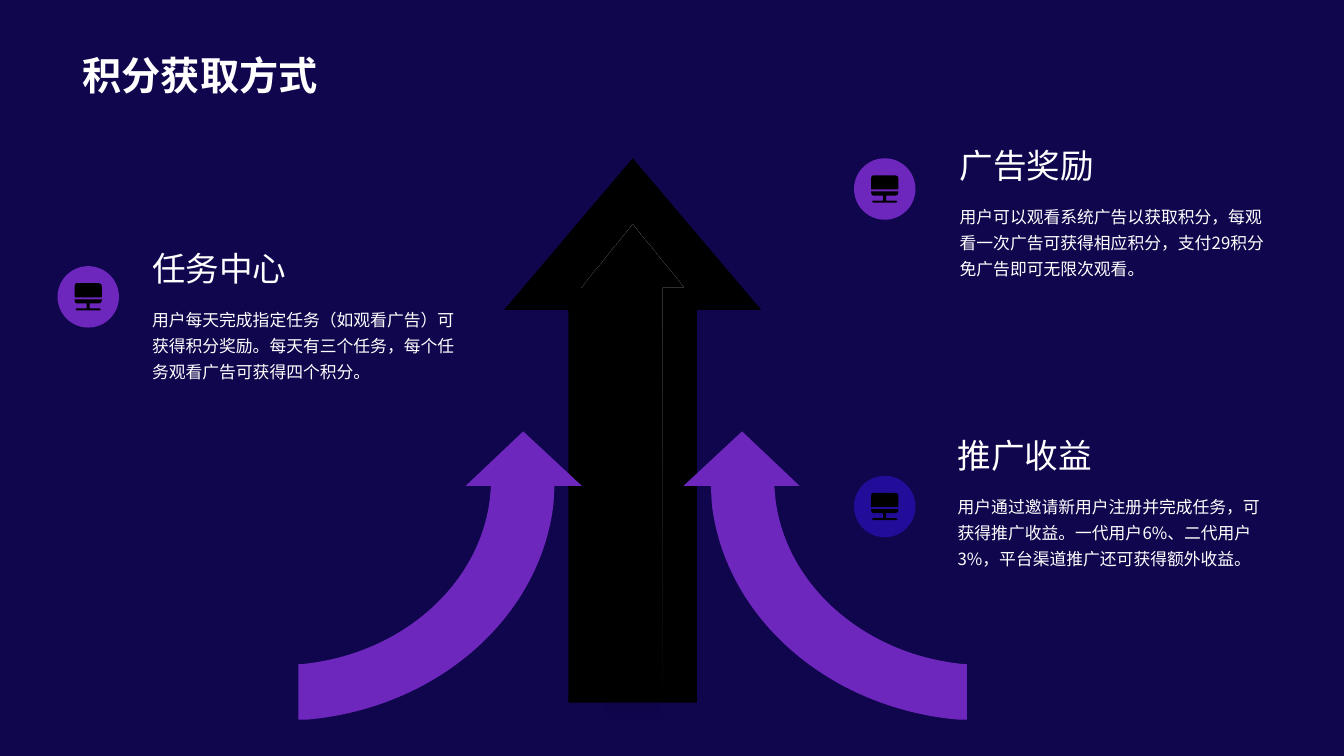
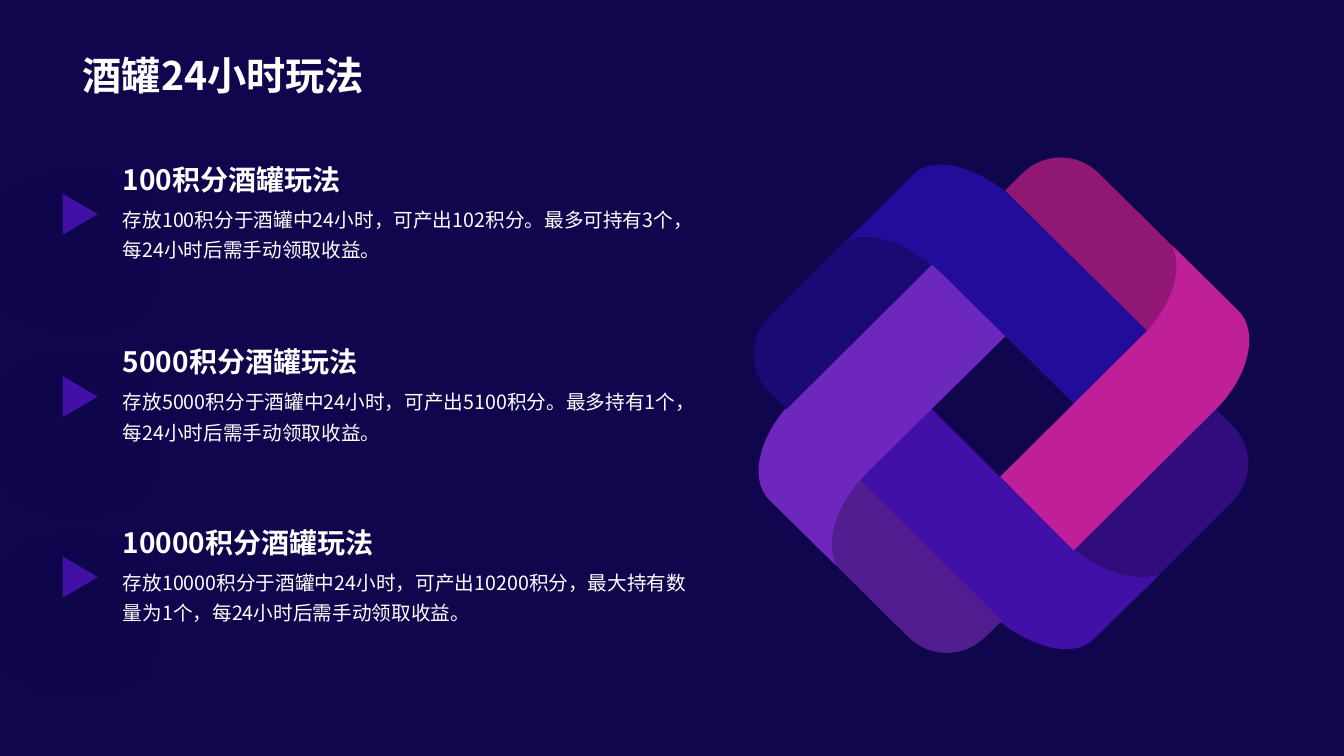
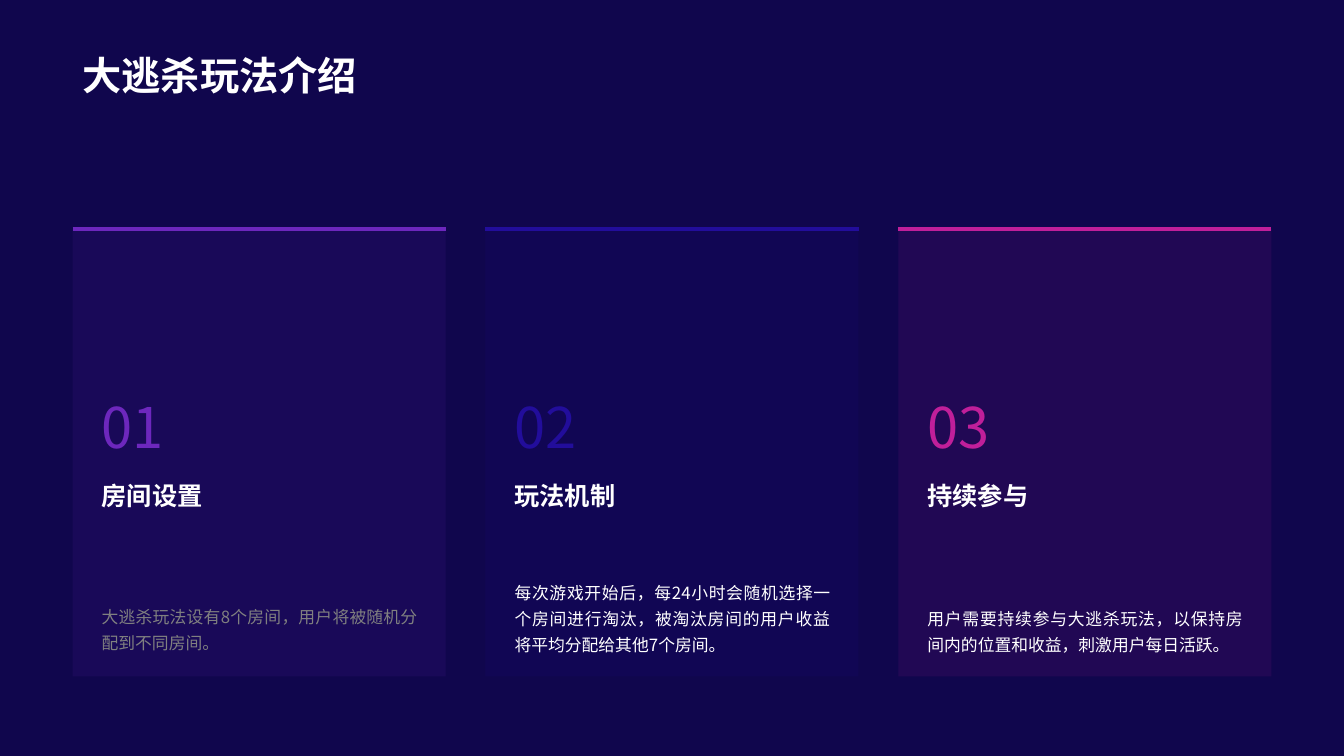
from lxml import etree
from pptx import Presentation
from pptx.dml.color import RGBColor
from pptx.enum.shapes import MSO_CONNECTOR, MSO_SHAPE
from pptx.enum.text import MSO_ANCHOR, MSO_AUTO_SIZE, PP_ALIGN
from pptx.oxml.ns import qn
from pptx.util import Inches, Pt

# Shared look
FONT = "Noto Sans CJK JP"
NIGHT = RGBColor(0x10, 0x06, 0x4D)
BLACK = RGBColor(0x00, 0x00, 0x00)
WHITE = RGBColor(0xFF, 0xFF, 0xFF)
GREY = RGBColor(0x80, 0x80, 0x80)
PURPLE = RGBColor(0x6D, 0x27, 0xBD)
BLUE = RGBColor(0x22, 0x0D, 0x9B)
VIOLET = RGBColor(0x40, 0x10, 0xA7)
PINK = RGBColor(0xC0, 0x1F, 0x9A)
DARK_PURPLE = RGBColor(0x52, 0x1D, 0x8E)
DARK_BLUE = RGBColor(0x1A, 0x0A, 0x74)
DARK_VIOLET = RGBColor(0x30, 0x0C, 0x7D)
DARK_PINK = RGBColor(0x90, 0x17, 0x73)

OVAL, UP_ARROW = MSO_SHAPE.OVAL, MSO_SHAPE.UP_ARROW
TRIANGLE, RECTANGLE = MSO_SHAPE.ISOSCELES_TRIANGLE, MSO_SHAPE.RECTANGLE
STRAIGHT = MSO_CONNECTOR.STRAIGHT
TOP, MIDDLE, BOTTOM = MSO_ANCHOR.TOP, MSO_ANCHOR.MIDDLE, MSO_ANCHOR.BOTTOM
LEFT, JUSTIFY = PP_ALIGN.LEFT, PP_ALIGN.JUSTIFY
CURVE_STEPS = 16


def write(box, text, size, colour=WHITE, bold=False, spacing=None, anchor=TOP, align=LEFT, wrap=True):
    """Fill a text box or placeholder with one paragraph."""
    frame = box.text_frame
    frame.word_wrap = wrap
    frame.auto_size = MSO_AUTO_SIZE.NONE
    frame.vertical_anchor = anchor
    para = frame.paragraphs[0]
    para.text = text
    para.alignment = align
    para.line_spacing = spacing
    para.font.name = FONT
    para.font.size = Pt(size)
    para.font.bold = bold
    para.font.color.rgb = colour
    latin = next(para._p.iter(qn("a:latin")))
    latin.addnext(etree.Element(qn("a:ea"), typeface=FONT))


def add_figure(page, form, colour, left=0, top=0, width=1, height=1):
    """Draw a preset shape, or outlines scaled by width and height.

    An outline is a list of points; six numbers stand for a Bezier curve.
    """
    if isinstance(form, list):
        outlines = [[[(Inches(left + width * x), Inches(top + height * y))
                      for x, y in zip(step[::2], step[1::2])] for step in outline]
                    for outline in form]
        # Points along the curves give the freeform its true bounds
        bounds = []
        for outline in outlines:
            for step in outline:
                if len(step) == 3:
                    knots = [bounds[-1]] + step
                    for i in range(1, CURVE_STEPS):
                        t = i / CURVE_STEPS
                        weights = (1 - t) ** 3, 3 * t * (1 - t) ** 2, 3 * t * t * (1 - t), t ** 3
                        bounds.append(tuple(round(sum(w * knot[axis] for w, knot in zip(weights, knots)))
                                            for axis in (0, 1)))
                bounds.append(step[-1])
        builder = page.shapes.build_freeform(*bounds[0])
        builder.add_line_segments(bounds[1:])
        shape = builder.convert_to_shape()
        # The drawn outline holds real curves
        route = next(shape._element.iter(qn("a:path")))
        for child in list(route):
            route.remove(child)
        for outline in outlines:
            for i, step in enumerate(outline):
                tag = "a:moveTo" if i == 0 else "a:cubicBezTo" if len(step) == 3 else "a:lnTo"
                move = etree.SubElement(route, qn(tag))
                for x, y in step:
                    etree.SubElement(move, qn("a:pt"), x=str(x - shape.left), y=str(y - shape.top))
            etree.SubElement(route, qn("a:close"))
    else:
        shape = page.shapes.add_shape(form, Inches(left), Inches(top), Inches(width), Inches(height))
    shape.shadow.inherit = False
    shape.fill.solid()
    shape.fill.fore_color.rgb = colour
    shape.line.fill.background()
    return shape


# Deck, background and titles
deck = Presentation()
deck.slide_width, deck.slide_height = Inches(13.33), Inches(7.5)
background = deck.slide_master.background.fill
background.solid()
background.fore_color.rgb = NIGHT
layout = deck.slide_layouts.get_by_name("Title Only")
layout_title = layout.placeholders[0]
layout_title.left, layout_title.top = Inches(0.72), Inches(0.46)
layout_title.width, layout_title.height = Inches(11.67), Inches(0.57)

pages = []
for title in ("积分获取方式", "酒罐24小时玩法", "大逃杀玩法介绍"):
    page = deck.slides.add_slide(layout)
    write(page.shapes.title, title, 28, bold=True, anchor=MIDDLE)
    pages.append(page)
points_page, jar_page, royale_page = pages

# Slide 1: screen icons in circles
SCREEN_ICON = [
    [(0.44, 0.33), (0.17, 0.33), (0.17, 0.34), (0.17, 0.36, 0.18, 0.37, 0.19, 0.37),
     (0.29, 0.37), (0.29, 0.41), (0.29, 0.42), (0.19, 0.42),
     (0.18, 0.42, 0.18, 0.42, 0.18, 0.43), (0.18, 0.43, 0.18, 0.44, 0.19, 0.44),
     (0.42, 0.44), (0.42, 0.44, 0.43, 0.43, 0.43, 0.43),
     (0.43, 0.42, 0.42, 0.42, 0.42, 0.42), (0.32, 0.42), (0.32, 0.41), (0.32, 0.37),
     (0.41, 0.37), (0.43, 0.37, 0.44, 0.36, 0.44, 0.34)],
    [(0.41, 0.17), (0.19, 0.17), (0.18, 0.17, 0.17, 0.18, 0.17, 0.2), (0.17, 0.31),
     (0.44, 0.31), (0.44, 0.2), (0.44, 0.18, 0.43, 0.17, 0.41, 0.17)],
]
for left, top, colour in ((0.57, 2.64, PURPLE), (8.47, 4.72, BLUE), (8.47, 1.57, PURPLE)):
    add_figure(points_page, OVAL, colour, left, top, 0.61, 0.61)
    add_figure(points_page, SCREEN_ICON, BLACK, left, top)

# Slide 1: central arrow and the two curved ones, mirrored
CURVED_ARROW = [
    [(1.08, 0), (0.5, 0.54), (0.77, 0.54), (0.78, 0.72), (0.91, 1.85, 1.94, 2.75, 3.23, 2.86),
     (3.31, 2.86), (3.31, 2.31), (3.29, 2.31), (2.3, 2.22, 1.51, 1.53, 1.41, 0.66),
     (1.4, 0.54), (1.65, 0.54)],
]
main_arrow = add_figure(points_page, UP_ARROW, BLACK, 5, 1.57, 2.55, 5.4)
main_arrow.adjustments[0], main_arrow.adjustments[1] = 0.5, 0.59
for axis, side in ((6.27, -1), (6.28, 1)):
    add_figure(points_page, CURVED_ARROW, PURPLE, axis, 4.28, side)

fading_arrow = add_figure(points_page, UP_ARROW, BLACK, 5.77, 2.23, 1.01, 4.91)
fading_arrow.adjustments[0], fading_arrow.adjustments[1] = 0.58, 0.62
fading_arrow.fill.gradient()
fading_arrow.fill.gradient_angle = 270
for stop in fading_arrow.fill.gradient_stops:
    stop.color.rgb = BLACK
last_colour = list(fading_arrow._element.iter(qn("a:srgbClr")))[-1]
etree.SubElement(last_colour, qn("a:alpha"), val="0")

# Slide 1: the three ways
WAYS = (
    (1.41, 2.41, "任务中心",
     "用户每天完成指定任务（如观看广告）可获得积分奖励。每天有三个任务，每个任务观看广告可获得四个积分。"),
    (9.42, 1.39, "广告奖励",
     "用户可以观看系统广告以获取积分，每观看一次广告可获得相应积分，支付29积分免广告即可无限次观看。"),
    (9.4, 4.27, "推广收益",
     "用户通过邀请新用户注册并完成任务，可获得推广收益。一代用户6%、二代用户3%，平台渠道推广还可获得额外收益。"),
)
for left, top, heading, detail in WAYS:
    box = points_page.shapes.add_textbox(Inches(left), Inches(top + 0.55), Inches(3.33), Inches(2.04))
    write(box, detail, 12, spacing=1.3)
    box = points_page.shapes.add_textbox(Inches(left), Inches(top), Inches(3.35), Inches(0.55))
    write(box, heading, 24, wrap=False)

# Slide 2: jar rules with triangle markers
JARS = (
    (1.56, "100积分酒罐玩法",
     "存放100积分于酒罐中24小时，可产出102积分。最多可持有3个，每24小时后需手动领取收益。"),
    (3.37, "5000积分酒罐玩法",
     "存放5000积分于酒罐中24小时，可产出5100积分。最多持有1个，每24小时后需手动领取收益。"),
    (5.16, "10000积分酒罐玩法",
     "存放10000积分于酒罐中24小时，可产出10200积分，最大持有数量为1个，每24小时后需手动领取收益。"),
)
for top, heading, detail in JARS:
    box = jar_page.shapes.add_textbox(Inches(1.12), Inches(top), Inches(5.91), Inches(0.5))
    write(box, heading, 20, bold=True, wrap=False)
    box = jar_page.shapes.add_textbox(Inches(1.12), Inches(top + 0.38), Inches(5.91), Inches(1.15))
    write(box, detail, 14, spacing=1.3)
    marker = add_figure(jar_page, TRIANGLE, VIOLET, 0.59, top + 0.39, 0.41, 0.35)
    marker.rotation = 90
    effects = marker._element.spPr.find(qn("a:effectLst"))
    shadow = etree.SubElement(effects, qn("a:outerShdw"), blurRad=str(Pt(64)), dist=str(Pt(27)),
                              dir=str(85 * 60000), rotWithShape="0")
    shadow_colour = etree.SubElement(shadow, qn("a:srgbClr"), val=str(BLACK))
    etree.SubElement(shadow_colour, qn("a:alpha"), val="40000")

# Slide 2: woven ribbon, each dark fold lying under its bright band
RIBBON = (
    (DARK_VIOLET, [(12.22, 4.98), (12.43, 4.77, 12.44, 4.43, 12.22, 4.22), (12.06, 4.06),
                   (10.36, 5.74), (10.52, 5.91), (10.73, 6.12, 11.08, 6.12, 11.29, 5.91)]),
    (VIOLET, [(9.77, 6.04), (10.16, 6.42, 10.64, 6.55, 10.85, 6.34), (11.48, 5.72),
              (11.49, 5.71, 11.5, 5.7, 11.51, 5.69), (11.27, 5.8, 10.85, 5.66, 10.51, 5.32),
              (8.88, 3.7), (8.15, 4.42)]),
    (DARK_PURPLE, [(9.01, 6.32), (9.22, 6.53, 9.56, 6.53, 9.77, 6.32), (9.94, 6.16),
                   (8.24, 4.47), (8.07, 4.63), (7.86, 4.84, 7.86, 5.18, 8.07, 5.39)]),
    (PURPLE, [(7.88, 3.96), (7.53, 4.3, 7.42, 4.75, 7.63, 4.96), (8.26, 5.58),
              (8.27, 5.59, 8.29, 5.6, 8.3, 5.61), (8.17, 5.38, 8.29, 5, 8.6, 4.69),
              (10.08, 3.23), (9.35, 2.51)]),
    (DARK_BLUE, [(7.63, 3.14), (7.42, 3.35, 7.42, 3.68, 7.63, 3.89), (7.8, 4.06),
                 (9.5, 2.37), (9.34, 2.21), (9.12, 2, 8.78, 2, 8.57, 2.21)]),
    (BLUE, [(10.13, 2.04), (9.75, 1.66, 9.27, 1.52, 9.06, 1.73), (8.43, 2.36),
            (8.42, 2.37, 8.41, 2.38, 8.4, 2.39), (8.64, 2.27, 9.05, 2.42, 9.39, 2.76),
            (11.03, 4.38), (11.76, 3.65)]),
    (DARK_PINK, [(10.9, 1.72), (10.69, 1.51, 10.35, 1.51, 10.14, 1.72), (9.97, 1.89),
                 (11.67, 3.57), (11.84, 3.41), (12.05, 3.2, 12.05, 2.86, 11.84, 2.65)]),
    (PINK, [(12.06, 4.06), (12.39, 3.73, 12.49, 3.29, 12.28, 3.08), (11.65, 2.46),
            (11.64, 2.45, 11.63, 2.44, 11.62, 2.43), (11.74, 2.66, 11.63, 3.03, 11.34, 3.32),
            (9.92, 4.73), (10.65, 5.46)]),
)
for colour, outline in RIBBON:
    add_figure(jar_page, [outline], colour)

# Slide 3: numbered cards
CARD_TOP, CARD_WIDTH = 2.27, 3.7
FIRST_CARD, LAST_CARD = 0.72, 8.91
CARDS = (
    (PURPLE, "房间设置", GREY, 5.13, "大逃杀玩法设有8个房间，用户将被随机分配到不同房间。"),
    (BLUE, "玩法机制", WHITE, 5.15,
     "每次游戏开始后，每24小时会随机选择一个房间进行淘汰，被淘汰房间的用户收益将平均分配给其他7个房间。"),
    (PINK, "持续参与", WHITE, 5.15,
     "用户需要持续参与大逃杀玩法，以保持房间内的位置和收益，刺激用户每日活跃。"),
)
for i, (accent, heading, detail_colour, detail_top, detail) in enumerate(CARDS):
    left = FIRST_CARD + i * (LAST_CARD - FIRST_CARD) / (len(CARDS) - 1)
    card = add_figure(royale_page, RECTANGLE, accent, left, CARD_TOP, CARD_WIDTH, 4.44)
    card_colour = next(card._element.spPr.iter(qn("a:srgbClr")))
    etree.SubElement(card_colour, qn("a:alpha"), val="10000")

    text_left = Inches(left + 0.19)
    box = royale_page.shapes.add_textbox(text_left, Inches(3.85), Inches(0.81), Inches(0.76))
    write(box, f"{i + 1:02}", 40, accent, wrap=False)
    box = royale_page.shapes.add_textbox(text_left, Inches(4.72), Inches(3.33), Inches(0.43))
    write(box, heading, 18, bold=True)
    box = royale_page.shapes.add_textbox(text_left, Inches(detail_top), Inches(3.33), Inches(1.4))
    write(box, detail, 12, detail_colour, spacing=1.3, anchor=BOTTOM, align=JUSTIFY)

    edge = royale_page.shapes.add_connector(STRAIGHT, Inches(left), Inches(CARD_TOP),
                                            Inches(left + CARD_WIDTH), Inches(CARD_TOP))
    edge.line.color.rgb = accent
    edge.line.width = Pt(3)
    etree.SubElement(edge._element.spPr, qn("a:effectLst"))

deck.save("out.pptx")
